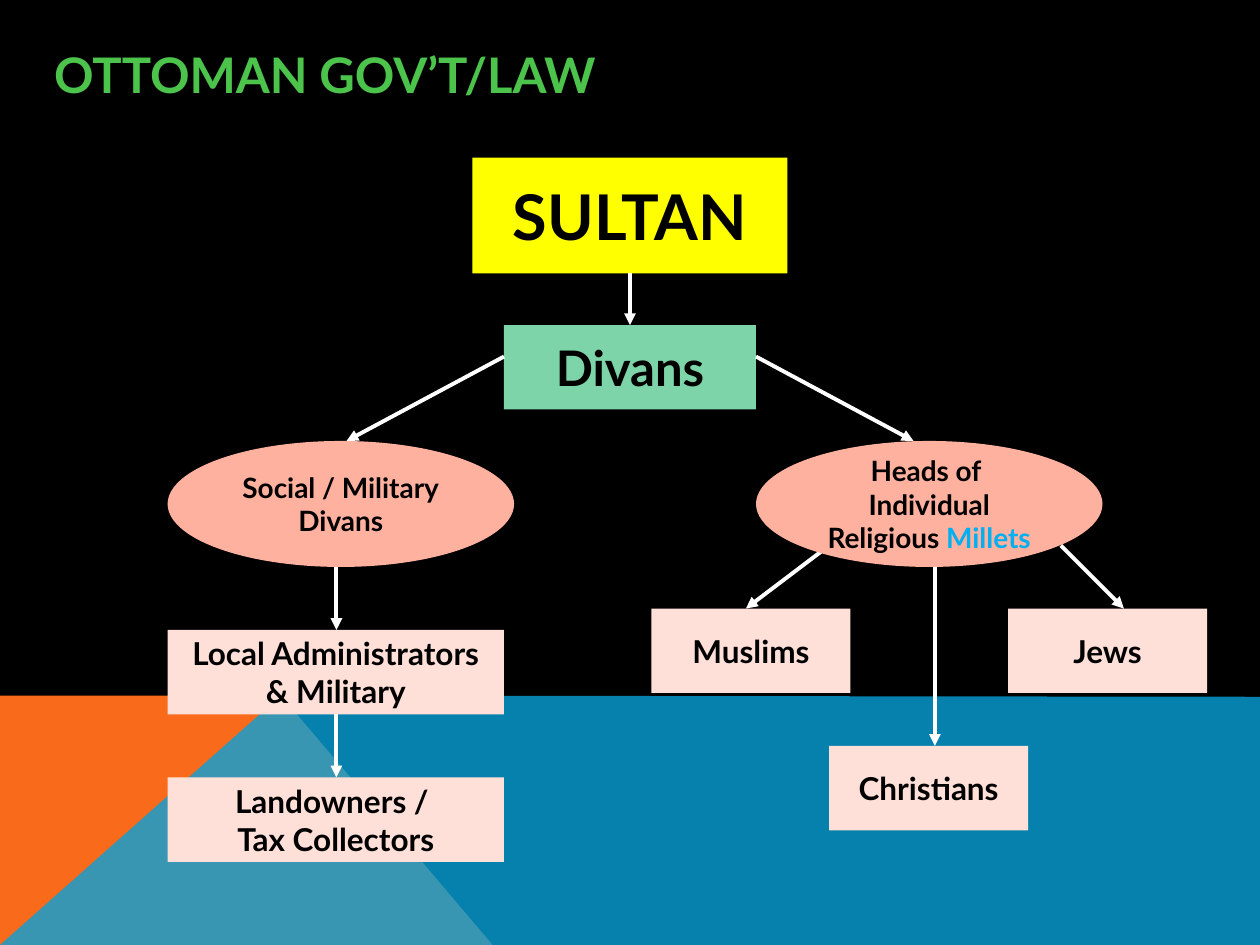
import pptx
import pptx.dml.color
import pptx.enum.shapes
import pptx.enum.text
import pptx.oxml
import pptx.oxml.ns
import pptx.util
from pptx.util import Inches

RECT = pptx.enum.shapes.MSO_SHAPE.RECTANGLE
OVAL = pptx.enum.shapes.MSO_SHAPE.OVAL
ALIGN = pptx.enum.text.PP_ALIGN
MIDDLE = pptx.enum.text.MSO_ANCHOR.MIDDLE
PINK, SALMON = "FFE0D9", "FFB19F"


def color(value):
    return pptx.dml.color.RGBColor.from_string(value)


def element(tag, **attributes):
    node = pptx.oxml.parse_xml(f"<{tag} {pptx.oxml.ns.nsdecls('a')}/>")
    for name, value in attributes.items():
        node.set(name, value)
    return node


class Chart:
    """Holds the style and the current slide."""
    font = "Lato"
    ink = "000000"
    line = "FFFFFF"

    def __init__(self, page):
        self.page = page
        page.background.fill.solid()
        page.background.fill.fore_color.rgb = color("000000")

    def style(self, span, size, ink):
        span.font.name = self.font
        span.font.size = pptx.util.Pt(size)
        span.font.bold = True
        span.font.color.rgb = color(ink)

    def paint(self, shape, fill):
        shape.shadow.inherit = False
        shape.fill.solid()
        shape.fill.fore_color.rgb = color(fill)
        shape.line.fill.background()

    def title(self, text, left, top, width, height):
        box = self.page.shapes.title
        box.left, box.top = Inches(left), Inches(top)
        box.width, box.height = Inches(width), Inches(height)
        box.text_frame.text = text
        box.text_frame.vertical_anchor = MIDDLE
        para = box.text_frame.paragraphs[0]
        para.alignment = ALIGN.LEFT
        self.style(para.runs[0], 28, "4CC44C")

    def band(self, points, fill, opacity=None):
        builder = self.page.shapes.build_freeform(
            Inches(points[0][0]), Inches(points[0][1]))
        builder.add_line_segments(
            [(Inches(x), Inches(y)) for x, y in points[1:]], close=True)
        shape = builder.convert_to_shape()
        self.paint(shape, fill)
        if opacity:
            fill_color = shape.fill._xPr.find(".//" + pptx.oxml.ns.qn("a:srgbClr"))
            fill_color.append(element("a:alpha", val=str(opacity * 1000)))

    def node(self, text, left, top, width, height, fill, size,
             kind=RECT, accent=""):
        box = self.page.shapes.add_shape(
            kind, Inches(left), Inches(top), Inches(width), Inches(height))
        self.paint(box, fill)
        box.text_frame.word_wrap = False
        box.text_frame.vertical_anchor = MIDDLE
        para = box.text_frame.paragraphs[0]
        para.text = text
        para.alignment = ALIGN.CENTER
        for span in para.runs:
            self.style(span, size, self.ink)
        if accent:
            span = para.add_run()
            span.text = accent
            self.style(span, size, "00B0F0")

    def arrow(self, x1, y1, x2, y2):
        link = self.page.shapes.add_connector(
            pptx.enum.shapes.MSO_CONNECTOR.STRAIGHT,
            Inches(x1), Inches(y1), Inches(x2), Inches(y2))
        link.line.color.rgb = color(self.line)
        link.line.width = pptx.util.Pt(2.25)
        link.line._get_or_add_ln().append(element("a:tailEnd", type="triangle"))
        link._element.spPr.append(element("a:effectLst"))


def main():
    deck = pptx.Presentation()
    deck.slide_width, deck.slide_height = Inches(10), Inches(7.5)
    chart = Chart(deck.slides.add_slide(deck.slide_layouts[5]))

    # Coloured bands along the bottom
    chart.band([(0, 7.5), (0, 5.52), (2.23, 5.52), (3.91, 7.5)], "F96A1B")
    chart.band([(0, 7.5), (2.23, 5.52), (10, 5.53), (10, 7.5)], "08A1D9", 80)

    chart.title("OTTOMAN GOV’T/LAW", 0.33, 0.17, 9.42, 0.83)

    # This arrow starts behind the oval of the millets
    chart.arrow(6.58, 4.33, 5.92, 4.83)

    # Ruler and council
    chart.node("SULTAN", 3.75, 1.25, 2.5, 0.92, "FFFF00", 36)
    chart.node("Divans", 4, 2.58, 2, 0.67, "7CD4A8", 28)

    # The two branches
    chart.node("Social / Military\nDivans", 1.33, 3.5, 2.75, 1, SALMON, 16, OVAL)
    chart.node("Heads of \nIndividual\nReligious ", 6, 3.5, 2.75, 1, SALMON, 16,
               OVAL, accent="Millets")

    # Local offices
    for text, top in (("Local Administrators\n& Military", 5),
                      ("Landowners / \nTax Collectors", 6.17)):
        chart.node(text, 1.33, top, 2.67, 0.67, PINK, 18)

    # Religious communities
    for text, left, top in (("Muslims", 5.17, 4.83), ("Jews", 8, 4.83),
                            ("Christians", 6.58, 5.92)):
        chart.node(text, left, top, 1.58, 0.67, PINK, 18)

    # Lines of authority
    for ends in ((5, 2.17, 5, 2.58),
                 (4, 2.83, 2.75, 3.5),
                 (6, 2.83, 7.25, 3.5),
                 (2.67, 4.5, 2.67, 5),
                 (2.67, 5.67, 2.67, 6.17),
                 (8.42, 4.33, 8.92, 4.83),
                 (7.42, 4.5, 7.42, 5.92)):
        chart.arrow(*ends)

    deck.save("out.pptx")


if __name__ == "__main__":
    main()
